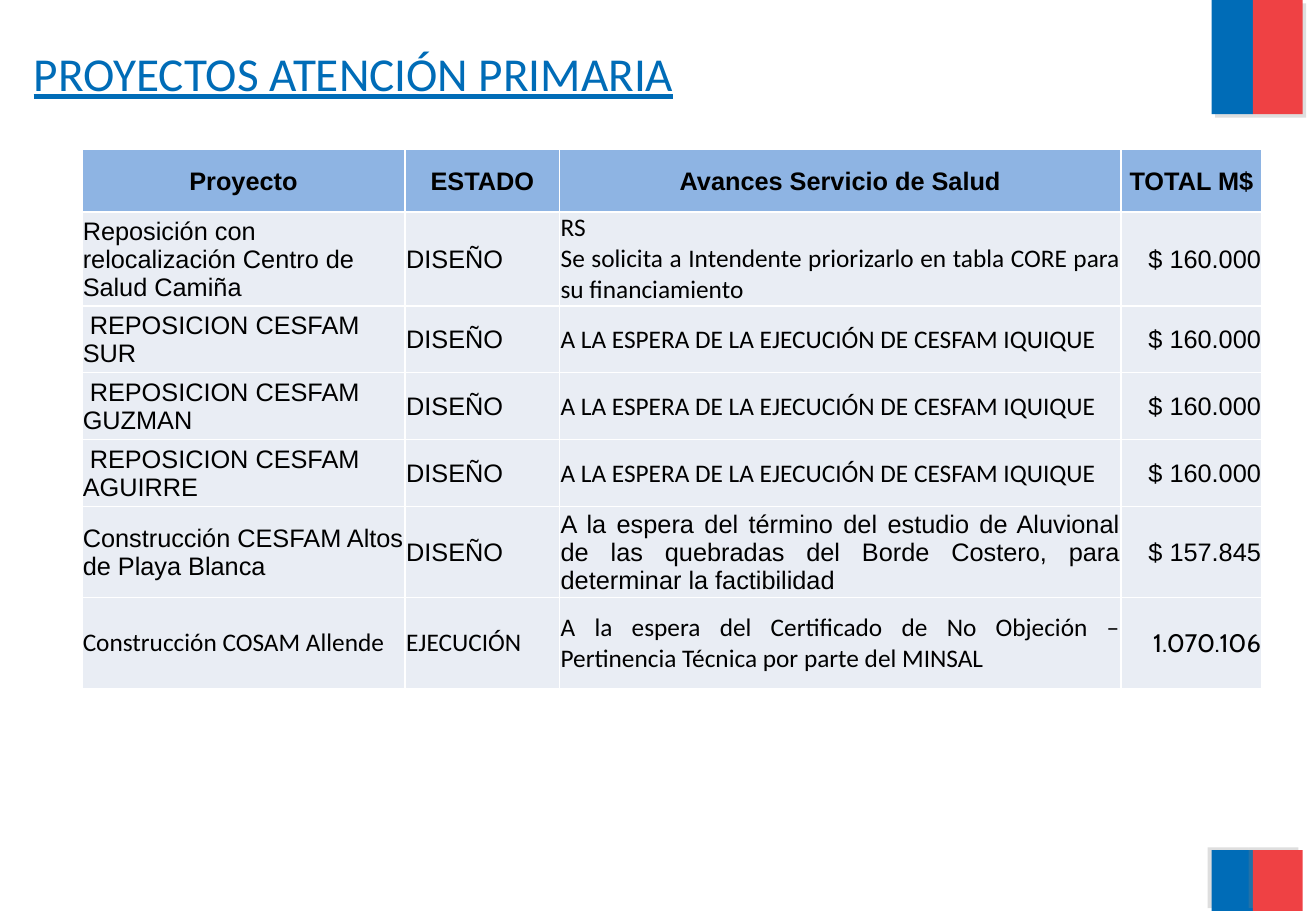
from dataclasses import dataclass

from lxml import etree
from pptx import Presentation
from pptx.dml.color import RGBColor
from pptx.enum.shapes import MSO_SHAPE
from pptx.enum.text import MSO_ANCHOR, PP_ALIGN
from pptx.oxml import parse_xml
from pptx.util import Cm, Pt

RECT = MSO_SHAPE.RECTANGLE
MIDDLE = MSO_ANCHOR.MIDDLE
LEFT, CENTER, RIGHT, JUSTIFY = (
    PP_ALIGN.LEFT, PP_ALIGN.CENTER, PP_ALIGN.RIGHT, PP_ALIGN.JUSTIFY)
A = "http://schemas.openxmlformats.org/drawingml/2006/main"
TITLE_ONLY = 5


@dataclass(frozen=True)
class Theme:
    blue: str = "006CB7"
    red: str = "EF4144"
    shadow: str = "808080"
    header: str = "8EB4E3"
    body: str = "E9EDF4"
    border: str = "FFFFFF"
    text: str = "000000"
    title_size: int = 28
    table_size: int = 15
    sans: str = "Calibri"
    table: str = "Arial"
    figure: str = "Cabin"


T = Theme()

COLUMN_WIDTHS = [6.76, 3.23, 11.73, 2.95]
ROW_HEIGHTS = [1.3, 1.93, 1.4, 1.4, 1.4, 1.9, 1.9]
ALIGNMENTS = [LEFT, LEFT, JUSTIFY, RIGHT]
HEADERS = ["Proyecto", "ESTADO", "Avances Servicio de Salud", "TOTAL M$"]
WAITING = "A LA ESPERA DE LA EJECUCIÓN DE CESFAM IQUIQUE"
PROJECTS = [
    ["Reposición con relocalización Centro de Salud Camiña", "DISEÑO",
     "RS\nSe solicita a Intendente priorizarlo en tabla CORE para su financiamiento",
     "$ 160.000"],
    *[[f" REPOSICION CESFAM {name}", "DISEÑO", WAITING, "$ 160.000"]
      for name in ("SUR", "GUZMAN", "AGUIRRE")],
    ["Construcción CESFAM Altos de Playa Blanca", "DISEÑO",
     "A la espera del término del estudio de Aluvional de las quebradas "
     "del Borde Costero, para determinar la factibilidad", "$ 157.845"],
    ["Construcción COSAM Allende", "EJECUCIÓN",
     "A la espera del Certificado de No Objeción – Pertinencia Técnica "
     "por parte del MINSAL", "1.070.106"],
]
PLAIN_FONTS = [T.table, T.table, T.sans, T.table]
PROJECT_FONTS = [PLAIN_FONTS] * 4 + [
    [T.table] * 4, [T.sans, T.sans, T.sans, T.figure]]


def rgb(color):
    return RGBColor.from_string(color)


def add_shadow(sp, angle):
    sp.shadow.inherit = False
    effects = sp._element.spPr.find(f"{{{A}}}effectLst")
    effects.append(parse_xml(
        f'<a:outerShdw xmlns:a="{A}" blurRad="0" dist="{Pt(3)}" '
        f'dir="{angle * 60000}" algn="ctr" rotWithShape="0">'
        f'<a:srgbClr val="{T.shadow}"><a:alpha val="25000"/></a:srgbClr>'
        '</a:outerShdw>'))


def add_flag(slide, left, top, height, angle):
    """Blue and red bands side by side."""
    for color, offset, width in ((T.blue, 0, 0.86), (T.red, 0.86, 1.04)):
        sp = slide.shapes.add_shape(
            RECT, Cm(left + offset), Cm(top), Cm(width), Cm(height))
        sp.fill.solid()
        sp.fill.fore_color.rgb = rgb(color)
        sp.line.fill.background()
        add_shadow(sp, angle)


def add_title(slide, text, left, top, width, height):
    title = slide.shapes.title
    title.left, title.top = Cm(left), Cm(top)
    title.width, title.height = Cm(width), Cm(height)
    tf = title.text_frame
    tf.text = text
    tf.word_wrap = True
    tf.vertical_anchor = MIDDLE
    p = tf.paragraphs[0]
    p.alignment = LEFT
    p.font.name, p.font.size = T.sans, Pt(T.title_size)
    p.font.underline = True
    p.font.color.rgb = rgb(T.blue)


def add_borders(cell):
    tc_pr = cell._tc.get_or_add_tcPr()
    for side in ("lnL", "lnR", "lnT", "lnB"):
        ln = etree.SubElement(tc_pr, f"{{{A}}}{side}", w=str(Pt(1)))
        fill = etree.SubElement(ln, f"{{{A}}}solidFill")
        etree.SubElement(fill, f"{{{A}}}srgbClr", val=T.border)


def fill_cell(cell, text, font, color, alignment, bold):
    add_borders(cell)
    cell.fill.solid()
    cell.fill.fore_color.rgb = rgb(color)
    cell.vertical_anchor = MIDDLE
    cell.margin_left = cell.margin_right = cell.margin_top = Cm(0.02)
    cell.margin_bottom = 0
    cell.text = text
    for p in cell.text_frame.paragraphs:
        p.alignment = alignment
        p.font.name, p.font.size = font, Pt(T.table_size)
        p.font.bold = bold
        p.font.color.rgb = rgb(T.text)


def add_projects(slide, left, top):
    table = slide.shapes.add_table(
        len(ROW_HEIGHTS), len(COLUMN_WIDTHS), Cm(left), Cm(top),
        Cm(sum(COLUMN_WIDTHS)), Cm(sum(ROW_HEIGHTS))).table
    table.horz_banding = False
    for column, width in zip(table.columns, COLUMN_WIDTHS):
        column.width = Cm(width)
    for row, height in zip(table.rows, ROW_HEIGHTS):
        row.height = Cm(height)
    for c, text in enumerate(HEADERS):
        fill_cell(table.cell(0, c), text, T.table, T.header, CENTER, True)
    for r, (texts, fonts) in enumerate(zip(PROJECTS, PROJECT_FONTS), 1):
        for c, (text, font) in enumerate(zip(texts, fonts)):
            fill_cell(table.cell(r, c), text, font, T.body, ALIGNMENTS[c], False)


def main():
    prs = Presentation()
    prs.slide_width, prs.slide_height = Cm(27.51), Cm(19.05)
    slide = prs.slides.add_slide(prs.slide_layouts[TITLE_ONLY])
    # Corner flags
    add_flag(slide, 25.33, 0, 2.39, angle=45)
    add_flag(slide, 25.33, 17.78, 1.27, angle=215)
    # Heading and project table
    add_title(slide, "PROYECTOS ATENCIÓN PRIMARIA", 0.45, 0.7, 21.9, 1.65)
    add_projects(slide, 1.71, 3.13)
    prs.save("out.pptx")


if __name__ == "__main__":
    main()
